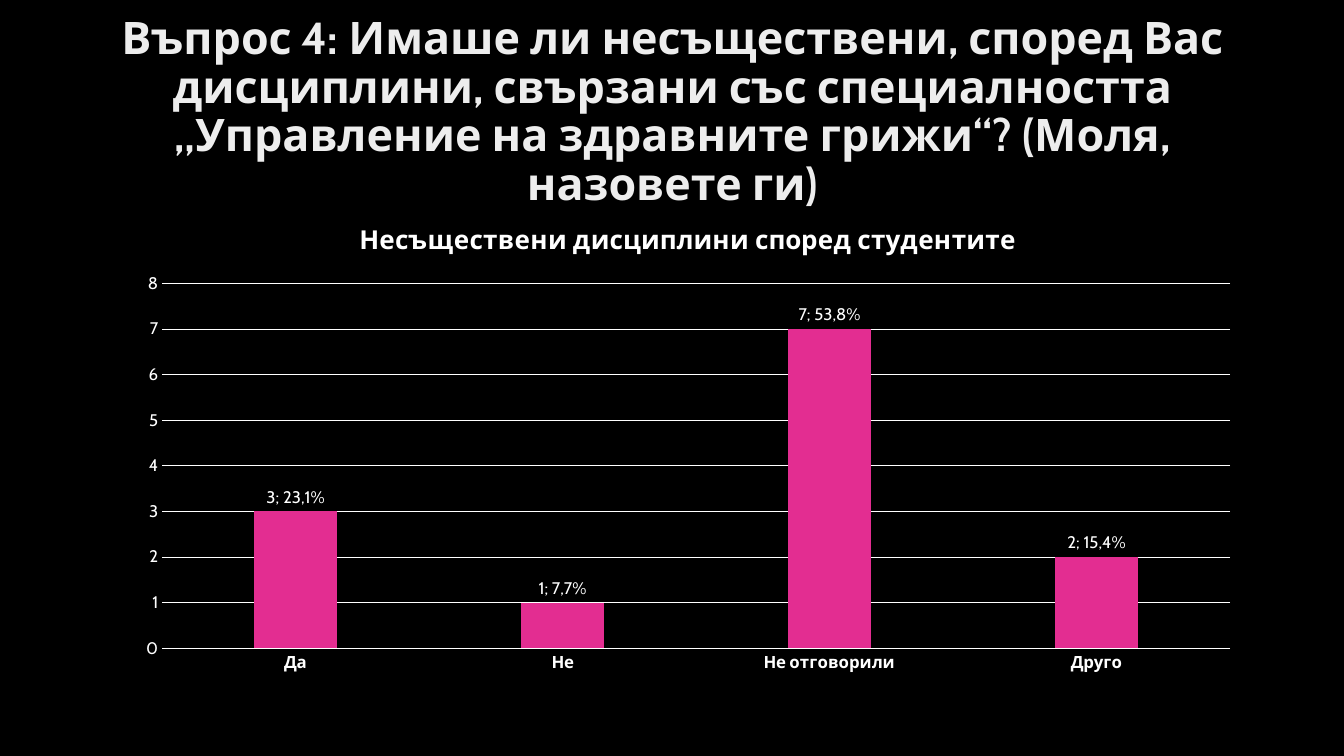
from dataclasses import dataclass

from lxml import etree
from pptx import Presentation
from pptx.chart.data import CategoryChartData
from pptx.dml.color import RGBColor
from pptx.enum.chart import XL_CHART_TYPE, XL_LABEL_POSITION, XL_TICK_MARK
from pptx.enum.text import MSO_ANCHOR, MSO_AUTO_SIZE, PP_ALIGN
from pptx.oxml.ns import qn
from pptx.util import Inches, Pt

COLUMNS = XL_CHART_TYPE.COLUMN_CLUSTERED
OUTSIDE = XL_LABEL_POSITION.OUTSIDE_END
NO_TICK = XL_TICK_MARK.NONE
MIDDLE = MSO_ANCHOR.MIDDLE
NO_FIT = MSO_AUTO_SIZE.NONE
CENTER = PP_ALIGN.CENTER

QUESTION = (
    "Въпрос 4: Имаше ли несъществени, според Вас дисциплини, свързани със "
    "специалността „Управление на здравните грижи“? (Моля, назовете ги)"
)
CHART_HEADING = "Несъществени дисциплини според студентите"
ANSWERS = [
    ("Да", 3, "23,1%"),
    ("Не", 1, "7,7%"),
    ("Не отговорили", 7, "53,8%"),
    ("Друго", 2, "15,4%"),
]

SLIDE_SIZE = (13.33, 7.5)
QUESTION_BOX = (0.069, 0.053, 0.863, 0.193)
CHART_BOX = (0.092, 0.267, 0.84, 0.635)


@dataclass(frozen=True)
class Theme:
    font: str = "Cabin"
    background: str = "000000"
    ink: str = "FFFFFF"
    bar: str = "E32D91"
    question_stops: tuple = ((0, "DEDEDE"), (28, "EDEDED"), (100, "FFFFFF"))
    question_angle: int = 80
    question_size: float = 32
    heading_size: float = 18.6
    label_size: float = 12
    base_size: float = 10
    line_width: float = 0.75


THEME = Theme()


def place(box):
    return [Inches(share * SLIDE_SIZE[i % 2]) for i, share in enumerate(box)]


def apply(target, formats):
    for name, value in formats.items():
        setattr(target, name, value)


def style_font(font, size, bold=False):
    apply(font, {"name": THEME.font, "size": Pt(size), "bold": bold})
    font.color.rgb = RGBColor.from_string(THEME.ink)


def style_line(line):
    line.width = Pt(THEME.line_width)
    line.color.rgb = RGBColor.from_string(THEME.ink)


def fill_gradient(font, stops, angle):
    font.fill.gradient()
    gradient = font.fill.gradient_stops and font._rPr.find(qn("a:gradFill"))
    for child in list(gradient):
        gradient.remove(child)
    stop_list = etree.SubElement(gradient, qn("a:gsLst"))
    for percent, color in stops:
        stop = etree.SubElement(stop_list, qn("a:gs"), pos=str(percent * 1000))
        etree.SubElement(stop, qn("a:srgbClr"), val=color)
    etree.SubElement(gradient, qn("a:lin"), ang=str(angle * 60000), scaled="0")


def add_question(slide):
    question = slide.shapes.title
    apply(question, dict(zip(("left", "top", "width", "height"), place(QUESTION_BOX))))
    frame = question.text_frame
    apply(frame, {"auto_size": NO_FIT, "word_wrap": True, "vertical_anchor": MIDDLE})
    paragraph = frame.paragraphs[0]
    apply(paragraph, {"alignment": CENTER, "line_spacing": 0.9})
    run = paragraph.add_run()
    run.text = QUESTION
    apply(run.font, {"name": THEME.font, "size": Pt(THEME.question_size), "bold": True})
    fill_gradient(run.font, THEME.question_stops, THEME.question_angle)


def add_answers(slide):
    names, counts, shares = zip(*ANSWERS)
    data = CategoryChartData()
    data.categories = names
    data.add_series(CHART_HEADING, counts)
    chart = slide.shapes.add_chart(COLUMNS, *place(CHART_BOX), data).chart
    style_font(chart.font, THEME.base_size)
    apply(chart, {"has_legend": False, "has_title": True})
    heading = chart.chart_title.text_frame
    heading.text = CHART_HEADING
    style_font(heading.paragraphs[0].runs[0].font, THEME.heading_size, True)

    for axis, bold in ((chart.category_axis, True), (chart.value_axis, False)):
        apply(axis, {"major_tick_mark": NO_TICK, "minor_tick_mark": NO_TICK})
        style_font(axis.tick_labels.font, THEME.label_size, bold)
    style_line(chart.category_axis.format.line)
    counts_axis = chart.value_axis
    apply(counts_axis, {"minimum_scale": 0, "maximum_scale": 8, "major_unit": 1})
    counts_axis.format.line.fill.background()
    style_line(counts_axis.major_gridlines.format.line)

    bars = chart.plots[0]
    apply(bars, {"gap_width": 219, "overlap": -27, "vary_by_categories": False})
    answers = bars.series[0]
    answers.format.fill.solid()
    answers.format.fill.fore_color.rgb = RGBColor.from_string(THEME.bar)
    labels = answers.data_labels
    apply(labels, {"show_value": True, "position": OUTSIDE})
    style_font(labels.font, THEME.label_size)
    for index, (count, share) in enumerate(zip(counts, shares)):
        label = answers.points[index].data_label
        label.text_frame.text = f"{count}; {share}"
        style_font(label.text_frame.paragraphs[0].runs[0].font, THEME.label_size)
        label.position = OUTSIDE


def main():
    deck = Presentation()
    deck.slide_width, deck.slide_height = map(Inches, SLIDE_SIZE)
    slide = deck.slides.add_slide(deck.slide_layouts[5])
    slide.background.fill.solid()
    slide.background.fill.fore_color.rgb = RGBColor.from_string(THEME.background)
    add_question(slide)
    add_answers(slide)
    deck.save("out.pptx")


if __name__ == "__main__":
    main()
